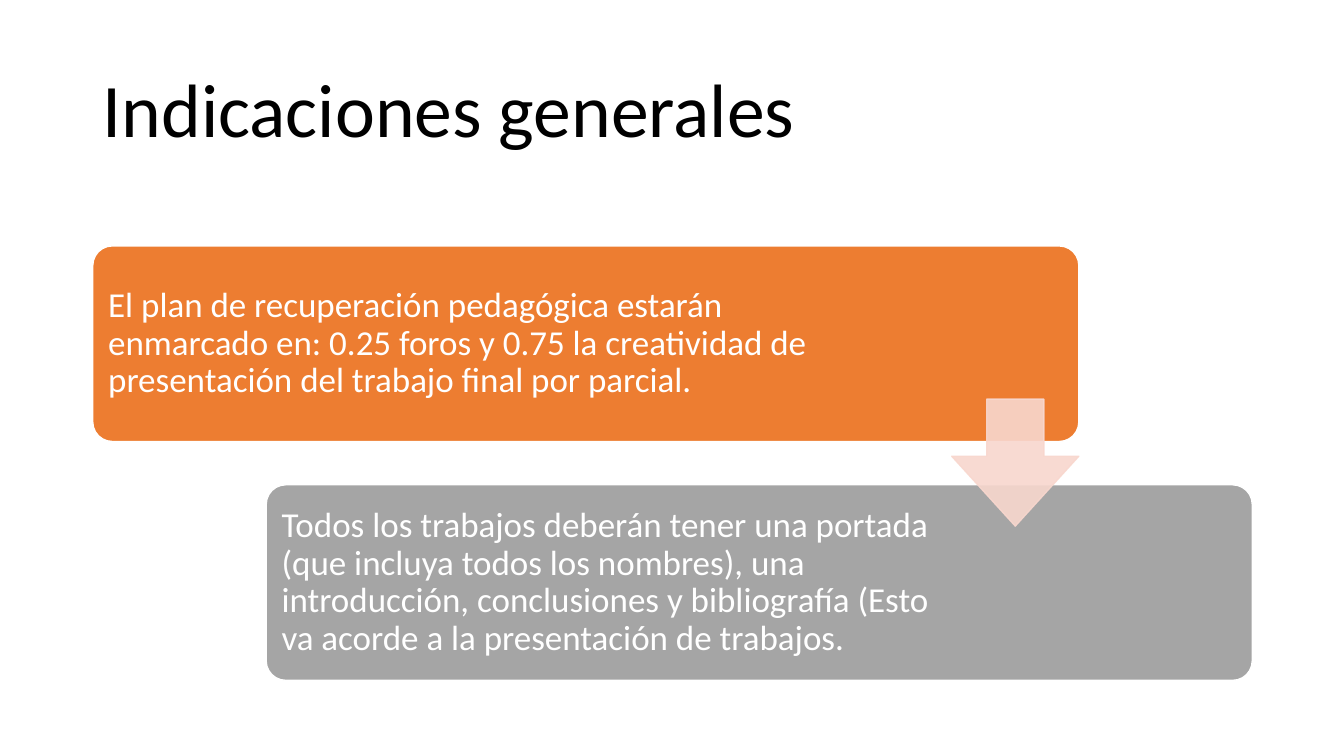
from lxml.etree import SubElement
from pptx import Presentation
from pptx.dml.color import RGBColor
from pptx.enum.shapes import MSO_SHAPE
from pptx.enum.text import MSO_ANCHOR, PP_ALIGN
from pptx.oxml.ns import qn
from pptx.util import Inches, Pt

BLACK = RGBColor(0x00, 0x00, 0x00)
WHITE = RGBColor(0xFF, 0xFF, 0xFF)
ORANGE = RGBColor(0xED, 0x7D, 0x31)
GRAY = RGBColor(0xA5, 0xA5, 0xA5)
PINK = RGBColor(0xF8, 0xD7, 0xCE)

# Content: text, card colour, text width in inches
TITLE = "Indicaciones generales"
STEPS = [
    ("El plan de recuperación pedagógica estarán enmarcado en: 0.25 foros y 0.75 "
     "la creatividad de presentación del trabajo final por parcial.", ORANGE, 7.77),
    ("Todos los trabajos deberán tener una portada (que incluya todos los nombres), "
     "una introducción, conclusiones y bibliografía (Esto va acorde a la presentación "
     "de trabajos.", GRAY, 6.67),
]

# Layout in inches: each card steps right and down from the one before
LEFT, TOP = 0.92, 2.44
STEP_RIGHT, STEP_DOWN = 1.72, 2.37
CARD_WIDTH, CARD_HEIGHT = 9.78, 1.94
TEXT_OFFSET = 0.055
ARROW_SIZE = 1.26


def add_text(slide, text, left, top, width, height, size, color, inset):
    box = slide.shapes.add_textbox(Inches(left), Inches(top), Inches(width), Inches(height))
    frame = box.text_frame
    frame.word_wrap = True
    frame.vertical_anchor = MSO_ANCHOR.MIDDLE
    frame.margin_left = frame.margin_right = Inches(0.1)
    frame.margin_top = frame.margin_bottom = Inches(inset)
    paragraph = frame.paragraphs[0]
    paragraph.text = text
    paragraph.alignment = PP_ALIGN.LEFT
    paragraph.line_spacing = 0.9
    paragraph.font.name = "Calibri"
    paragraph.font.size = Pt(size)
    paragraph.font.color.rgb = color


def add_block(slide, kind, left, top, width, height, adjustments, fill, line):
    shape = slide.shapes.add_shape(
        kind, Inches(left), Inches(top), Inches(width), Inches(height))
    for index, value in enumerate(adjustments):
        shape.adjustments[index] = value
    shape.shadow.inherit = False
    shape.fill.solid()
    shape.fill.fore_color.rgb = fill
    shape.line.color.rgb = line
    shape.line.width = Pt(1)
    return shape


def main():
    presentation = Presentation()
    presentation.slide_width = Inches(13.33)
    presentation.slide_height = Inches(7.5)
    slide = presentation.slides.add_slide(presentation.slide_layouts[6])

    # Title
    add_text(slide, TITLE, LEFT, 0.4, 11.5, 1.45, 54, BLACK, 0.05)

    # Staggered cards
    for index, (text, color, text_width) in enumerate(STEPS):
        left = LEFT + index * STEP_RIGHT
        top = TOP + index * STEP_DOWN
        add_block(slide, MSO_SHAPE.ROUNDED_RECTANGLE, left, top,
                  CARD_WIDTH, CARD_HEIGHT, [0.1], color, WHITE)
        add_text(slide, text, left + TEXT_OFFSET, top + TEXT_OFFSET, text_width,
                 CARD_HEIGHT - 2 * TEXT_OFFSET, 25, WHITE, 0.1)

    # Translucent arrow, flush with the right edge of the first card
    arrow = add_block(slide, MSO_SHAPE.DOWN_ARROW, LEFT + CARD_WIDTH - ARROW_SIZE, 3.96,
                      ARROW_SIZE, ARROW_SIZE, [0.55, 0.45], PINK, PINK)
    # python-pptx orders the down arrow's adjustments as shaft width, head length
    arrow.adjustments[0], arrow.adjustments[1] = 0.45, 0.55
    for color in arrow.element.spPr.iter(qn("a:srgbClr")):
        SubElement(color, qn("a:alpha"), val="90000")

    presentation.save("out.pptx")


if __name__ == "__main__":
    main()
